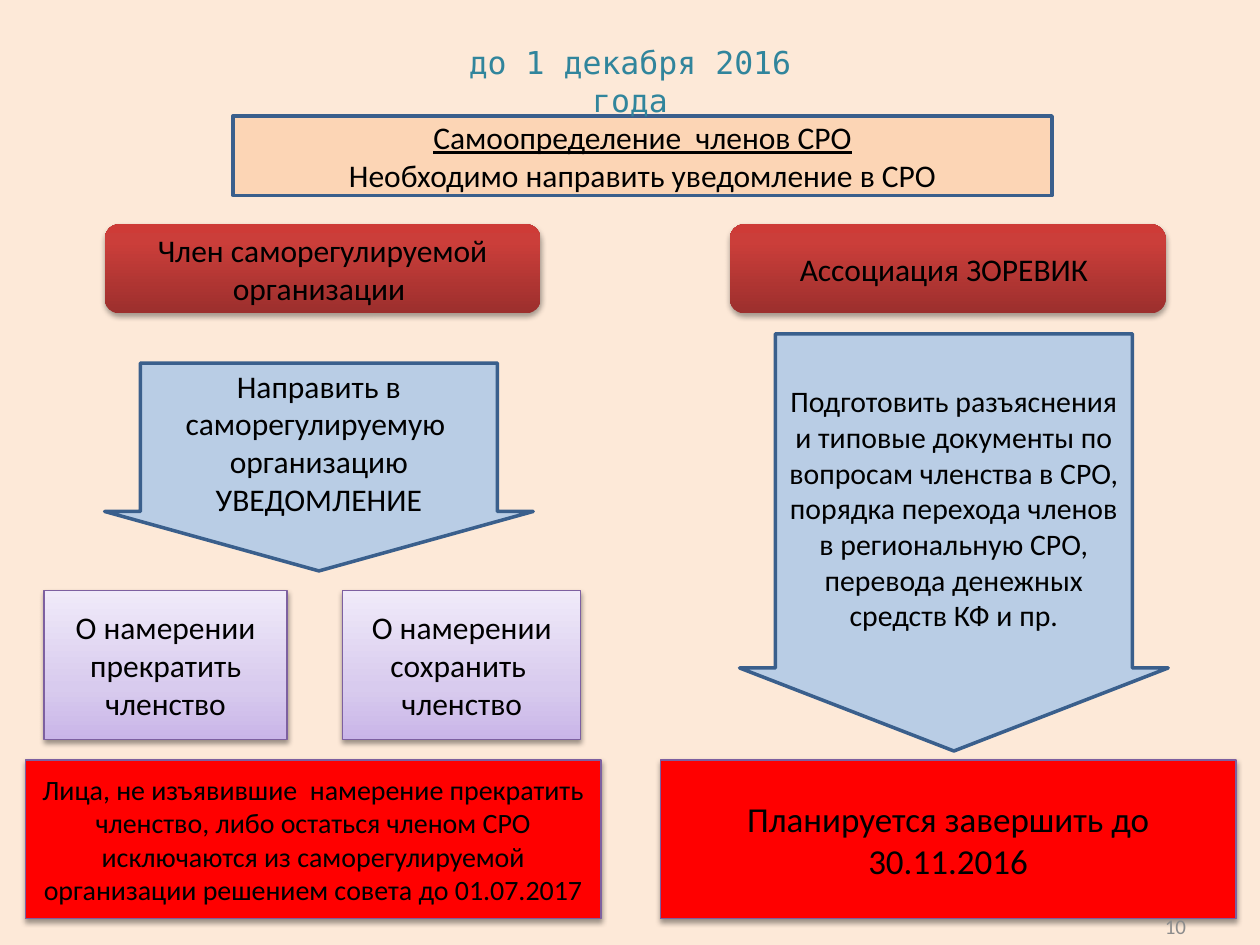
from lxml.etree import SubElement
from pptx import Presentation
from pptx.dml.color import RGBColor
from pptx.enum.shapes import MSO_SHAPE as Preset
from pptx.enum.text import MSO_ANCHOR as Anchor, MSO_AUTO_SIZE as AutoSize, PP_ALIGN as Align
from pptx.oxml.ns import qn
from pptx.util import Cm, Pt

BLUE = {"fill": "B9CDE5", "line": "3A5F8C", "line_width": 2}
PEACH = {**BLUE, "fill": "FCD5B5"}
CRIMSON = {"fill": [(0, "9C2F2D"), (80, "CB3E3A"), (100, "CE3B37")], "shadow": (35, 1.8)}
LILAC = {"fill": [(0, "C9B5E8"), (35, "D8CBEE"), (100, "F0EAF9")],
         "line": "7D60A0", "shadow": (38, 1.6)}
RED = {**LILAC, "fill": "FF0000"}


def color(value):
    return RGBColor.from_string(value)


def add_gradient(shape, stops):
    """Fill upwards with (percent, colour) stops."""
    shape.fill.gradient()
    shape.fill.gradient_angle = 90
    stop_list = shape._element.spPr.find(".//" + qn("a:gsLst"))
    for old_stop in list(stop_list):
        stop_list.remove(old_stop)
    for percent, value in stops:
        stop = SubElement(stop_list, qn("a:gs"), pos=str(percent * 1000))
        SubElement(stop, qn("a:srgbClr"), val=value)


def add_shadow(shape, opacity, distance):
    """Cast a soft black shadow downwards."""
    effects = shape._element.spPr.find(qn("a:effectLst"))
    outer = SubElement(effects, qn("a:outerShdw"), blurRad=str(Pt(3.1)),
                       dist=str(Pt(distance)), dir="5400000", rotWithShape="0")
    black = SubElement(outer, qn("a:srgbClr"), val="000000")
    SubElement(black, qn("a:alpha"), val=str(opacity * 1000))


def write(frame, text, size=18, font="Calibri", ink="000000", align=Align.CENTER,
          anchor=Anchor.MIDDLE, underline_first=False):
    """Write one paragraph for each line of text."""
    frame.word_wrap = True
    frame.vertical_anchor = anchor
    for index, line in enumerate(text.split("\n")):
        para = frame.paragraphs[0] if index == 0 else frame.add_paragraph()
        para.alignment = align
        span = para.add_run()
        span.text = line
        span.font.size = Pt(size)
        span.font.name = font
        span.font.color.rgb = color(ink)
        if underline_first and index == 0:
            span.font.underline = True


def add_box(page, place, text, fill, line=None, line_width=0.75, shadow=None,
            preset=Preset.RECTANGLE, adjust=(), **text_format):
    box = page.shapes.add_shape(preset, *map(Cm, place))
    for index, value in enumerate(adjust):
        box.adjustments[index] = value
    if isinstance(fill, str):
        box.fill.solid()
        box.fill.fore_color.rgb = color(fill)
    else:
        add_gradient(box, fill)
    if line:
        box.line.color.rgb = color(line)
        box.line.width = Pt(line_width)
    else:
        box.line.fill.background()
    box.shadow.inherit = False
    if shadow:
        add_shadow(box, *shadow)
    write(box.text_frame, text, **text_format)


def add_arrow(page, place, text, head, **text_format):
    add_box(page, place, text, preset=Preset.DOWN_ARROW, adjust=(0.833, head),
            **BLUE, **text_format)


def add_label(page, place, text, **text_format):
    label = page.shapes.add_textbox(*map(Cm, place))
    write(label.text_frame, text, **text_format)
    return label


def main():
    deck = Presentation()
    deck.slide_width, deck.slide_height = Cm(25.4), Cm(19.05)
    page = deck.slides.add_slide(deck.slide_layouts[6])
    page.background.fill.solid()
    page.background.fill.fore_color.rgb = color("FDE9D8")

    # Heading
    add_box(page, (4.7, 2.34, 16.51, 1.6),
            "Самоопределение  членов СРО\nНеобходимо направить уведомление в СРО",
            underline_first=True, **PEACH)
    title = add_label(page, (8.94, 0.74, 7.52, 1.02), "до 1 декабря 2016 года",
                      font="DejaVu Sans Mono", ink="31859C", anchor=Anchor.TOP)
    title.text_frame.auto_size = AutoSize.SHAPE_TO_FIT_TEXT

    # Who acts
    for left, text in ((2.11, "Член саморегулируемой организации "),
                       (14.71, "Ассоциация ЗОРЕВИК ")):
        add_box(page, (left, 4.52, 8.79, 1.8), text,
                preset=Preset.ROUNDED_RECTANGLE, **CRIMSON)

    # What they do
    add_arrow(page, (2.11, 7.32, 8.64, 4.19),
              "Направить в саморегулируемую  организацию\nУВЕДОМЛЕНИЕ", 0.286)
    add_arrow(page, (14.91, 6.73, 8.64, 8.41),
              "Подготовить разъяснения и типовые документы по вопросам членства в СРО, "
              "порядка перехода членов в региональную СРО, перевода денежных средств "
              "КФ и пр.", 0.199, size=17)

    # Kinds of notice
    for left, width, text in ((0.89, 4.9, "О намерении прекратить членство"),
                              (6.91, 4.8, "О намерении сохранить  членство")):
        add_box(page, (left, 11.91, width, 3), text, **LILAC)

    # Outcomes
    for left, size, text in (
            (0.51, 16, "Лица, не изъявившие  намерение прекратить членство, либо остаться "
                       "членом СРО\nисключаются из саморегулируемой организации решением "
                       "совета до 01.07.2017"),
            (13.31, 20, "Планируется завершить до 30.11.2016")):
        add_box(page, (left, 15.32, 11.61, 3.2), text, size=size, **RED)

    # Page number
    add_label(page, (18.24, 18.31, 5.92, 0.74), "10", size=12, ink="8C8C8C",
              align=Align.RIGHT)

    deck.save("out.pptx")


if __name__ == "__main__":
    main()
